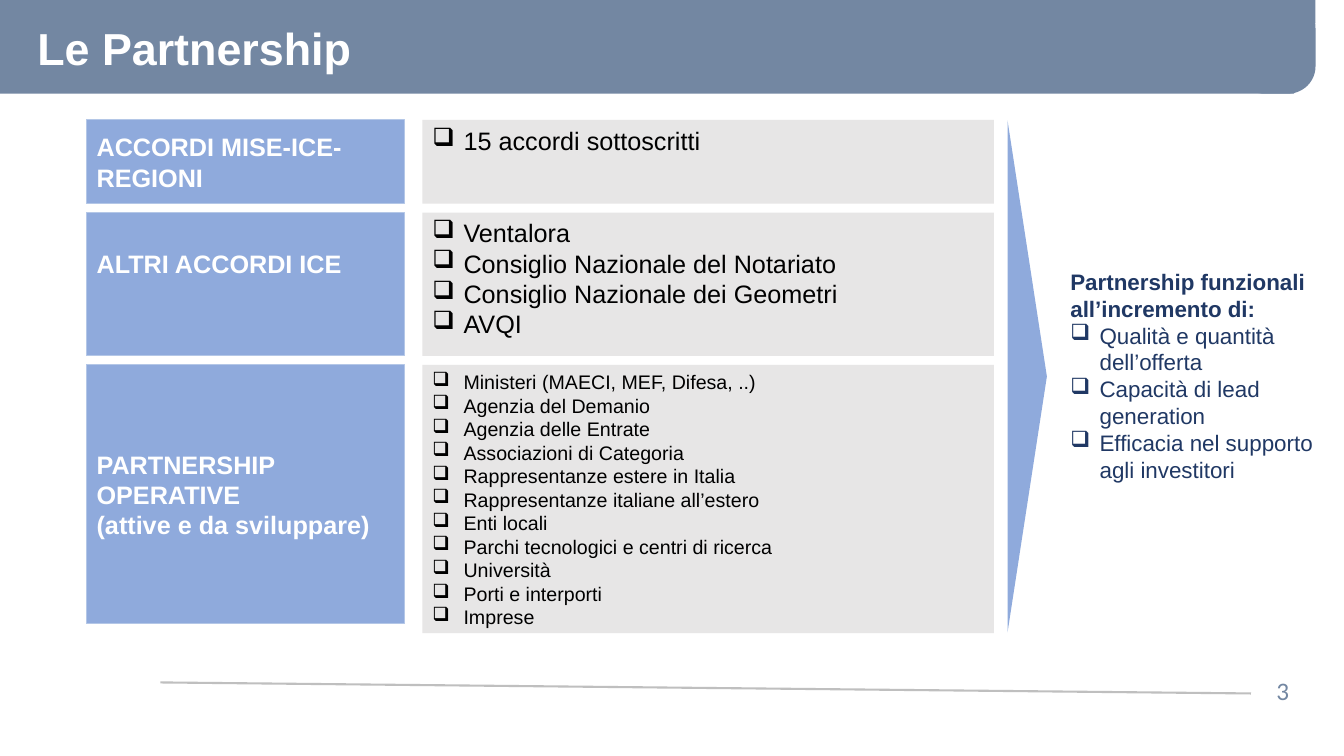
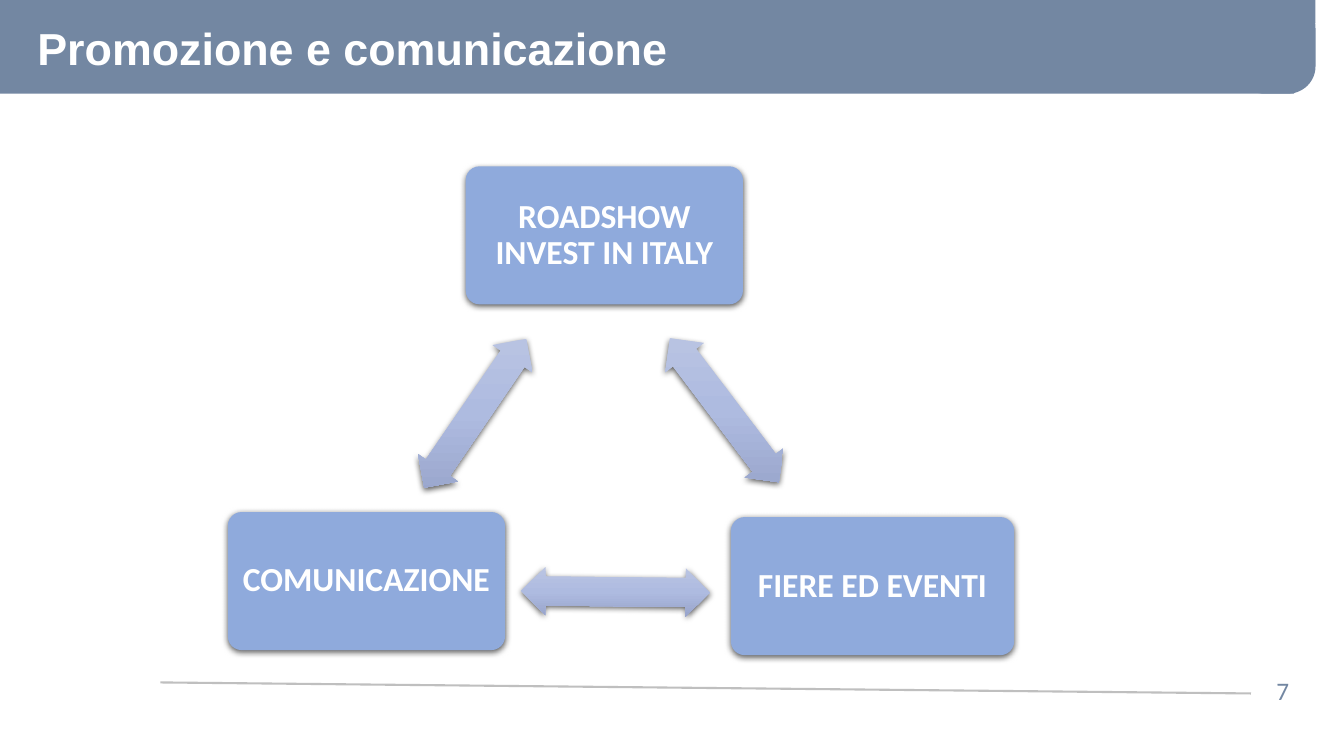
"""Builds two slides on partnerships and promotion under a shared header and footer."""
from dataclasses import dataclass, replace
from typing import NamedTuple, Optional

from lxml import etree
from pptx import Presentation, util as u
from pptx.dml.color import RGBColor
from pptx.enum import shapes, text
from pptx.oxml import ns

WIDTH, HEIGHT = u.Inches(13.33), u.Inches(7.5)
COLOURS = {
    "slate": "7387A2", "rule": "BFBFBF", "blue": "8FAADC", "edge": "B4C7E7",
    "grey": "E7E6E6", "navy": "203864", "white": "FFFFFF", "black": "000000",
}
ARROW_GRADIENT = {0: "BBC5E3", 50: "AEBBE0", 100: "98A4CB"}
KIND = shapes.MSO_SHAPE
ANCHOR, ALIGN = text.MSO_ANCHOR, text.PP_ALIGN


class Box(NamedTuple):
    """A frame in percent of the slide's width and height."""
    x: float
    y: float
    w: float
    h: float

    def emu(self) -> tuple[int, int, int, int]:
        """Return the frame in slide units."""
        return (round(WIDTH * self.x / 100), round(HEIGHT * self.y / 100),
                round(WIDTH * self.w / 100), round(HEIGHT * self.h / 100))


@dataclass(frozen=True)
class Style:
    """The look of a block of text; insets and indent are in inches."""
    size: int
    colour: str
    bold: bool = False
    font: str = "Arial"
    align: ALIGN = ALIGN.LEFT
    anchor: ANCHOR = ANCHOR.TOP
    insets: tuple[float, float, float, float] = (0.1, 0.05, 0.1, 0.05)
    spacing: Optional[float] = None
    indent: float = 0
    plain_lead: bool = False


class Agreement(NamedTuple):
    """A row of the partnership grid."""
    label: str
    label_style: Style
    partners: str
    size: int
    height: float
    overhang: float = 0


class Topic(NamedTuple):
    """A rounded box of the promotion cycle."""
    name: str
    box: Box


class Exchange(NamedTuple):
    """A double arrow of the promotion cycle."""
    box: Box
    angle: float


TITLE = Style(32, "white", True, anchor=ANCHOR.MIDDLE, insets=(0, 0, 0, 0), spacing=0.9)
PAGE_NUMBER = Style(18, "slate", font="Calibri", align=ALIGN.CENTER)
LABEL = Style(18, "white", True, anchor=ANCHOR.MIDDLE)
LOWERED_LABEL = replace(LABEL, anchor=ANCHOR.TOP, insets=(0.1, 0.35, 0.1, 0.05))
PARTNERS = Style(18, "black", indent=0.31)
BENEFITS = Style(16, "navy", indent=0.29, plain_lead=True)
TOPIC = Style(24, "white", True, "Calibri", ALIGN.CENTER, ANCHOR.MIDDLE,
              (0.1, 0.1, 0.1, 0.1), 0.9)

HEADER = (
    (KIND.RECTANGLE, Box(0, 0, 96.3, 12.4), ()),
    (KIND.ROUNDED_RECTANGLE, Box(92.03, 0, 5.85, 12.4), (0.35,)),
    (KIND.RECTANGLE, Box(92.03, 0, 5.85, 3.07), ()),
)
TITLE_BOX = Box(2.78, 2.67, 92.7, 8.13)
FOOTER_RULE = Box(11.93, 90.27, 81.15, 1.46)
NUMBER_BOX = Box(93.08, 88.67, 4.73, 5.33)

LABEL_X, LABEL_W = 6.45, 23.63
PARTNERS_X, PARTNERS_W = 31.43, 42.53
GRID_TOP, ROW_GAP = 15.87, 1.2
POINTER_BOX = Box(57.38, 47.2, 38.1, 5.2)
BENEFITS_BOX = Box(78.9, 34.8, 21.08, 30.13)

AGREEMENTS = (
    Agreement("ACCORDI MISE-ICE-REGIONI", LABEL, "15 accordi sottoscritti", 18, 11.07),
    Agreement("ALTRI ACCORDI ICE", LOWERED_LABEL,
              "Ventalora\nConsiglio Nazionale del Notariato\n"
              "Consiglio Nazionale dei Geometri\nAVQI", 18, 18.93),
    Agreement("PARTNERSHIP OPERATIVE\n(attive e da sviluppare)", LABEL,
              "Ministeri (MAECI, MEF, Difesa, ..)\nAgenzia del Demanio\n"
              "Agenzia delle Entrate\nAssociazioni di Categoria\n"
              "Rappresentanze estere in Italia\nRappresentanze italiane all’estero\n"
              "Enti locali\nParchi tecnologici e centri di ricerca\n"
              "Università\nPorti e interporti\nImprese", 14, 34.27, ROW_GAP),
)
BENEFITS_TEXT = (
    "Partnership funzionali all’incremento di:\nQualità e quantità dell’offerta\n"
    "Capacità di lead generation\nEfficacia nel supporto agli investitori"
)
TOPICS = (
    Topic("ROADSHOW INVEST IN ITALY", Box(34.65, 22, 20.63, 18.27)),
    Topic("FIERE ED EVENTI", Box(54.38, 68.4, 21.08, 18.27)),
    Topic("COMUNICAZIONE", Box(16.95, 67.73, 20.63, 18.27)),
)
EXCHANGES = (
    Exchange(Box(47.18, 51.07, 13.43, 6.4), 52.9),
    Exchange(Box(38.78, 75.07, 14.03, 6.4), 180.6),
    Exchange(Box(28.65, 51.47, 13.43, 6.4), 304.4),
)


def rgb(name: str) -> RGBColor:
    """Look up a named colour."""
    return RGBColor.from_string(COLOURS[name])


def add_child(parent, tag: str, **attributes):
    """Append a drawing element and return it."""
    return etree.SubElement(parent, ns.qn(tag), attributes)


def write(shape, words: str, style: Style) -> None:
    """Fill a shape with text in the given style."""
    frame = shape.text_frame
    frame.text = words
    frame.word_wrap = True
    frame.vertical_anchor = style.anchor
    (frame.margin_left, frame.margin_top,
     frame.margin_right, frame.margin_bottom) = map(u.Inches, style.insets)
    for place, paragraph in enumerate(frame.paragraphs):
        lead = style.plain_lead and place == 0
        paragraph.alignment = style.align
        if style.spacing:
            paragraph.line_spacing = style.spacing
        if style.indent and not lead:
            properties = paragraph._p.get_or_add_pPr()
            reach = u.Inches(style.indent)
            properties.set("marL", str(reach))
            properties.set("indent", str(-reach))
            add_child(properties, "a:buChar", char="❑")
        for run in paragraph.runs:
            run.font.name = style.font
            run.font.size = u.Pt(style.size)
            run.font.bold = style.bold or lead
            run.font.color.rgb = rgb(style.colour)


def add_text(slide, box: Box, words: str, style: Style) -> None:
    """Add a text box."""
    write(slide.shapes.add_textbox(*box.emu()), words, style)


def add_block(slide, kind: KIND, box: Box, fill: str, adjustments: tuple[float, ...] = (),
              edge: Optional[str] = None, angle: float = 0):
    """Add a flat filled shape and return it."""
    block = slide.shapes.add_shape(kind, *box.emu())
    block.shadow.inherit = False
    block.fill.solid()
    block.fill.fore_color.rgb = rgb(fill)
    if edge:
        block.line.color.rgb = rgb(edge)
        block.line.width = u.Pt(0.75)
    else:
        block.line.fill.background()
    for place, value in enumerate(adjustments):
        block.adjustments[place] = value
    block.rotation = angle
    return block


def add_shadow(block) -> None:
    """Give a shape a soft shadow below."""
    effects = block._element.spPr.find(ns.qn("a:effectLst"))
    shadow = add_child(effects, "a:outerShdw", blurRad=str(u.Pt(4.5)), dist=str(u.Pt(1.5)),
                       dir="5400000", algn="ctr", rotWithShape="0")
    shade = add_child(shadow, "a:srgbClr", val=COLOURS["black"])
    add_child(shade, "a:alpha", val="63000")


def shade_downwards(block) -> None:
    """Replace a solid fill by the arrow gradient, upright at any rotation."""
    properties = block._element.spPr
    gradient = etree.Element(ns.qn("a:gradFill"), rotWithShape="0")
    stops = add_child(gradient, "a:gsLst")
    for share, colour in ARROW_GRADIENT.items():
        stop = add_child(stops, "a:gs", pos=str(share * 1000))
        add_child(stop, "a:srgbClr", val=colour)
    add_child(gradient, "a:lin", ang="5400000", scaled="0")
    properties.replace(properties.find(ns.qn("a:solidFill")), gradient)


def add_page(deck, title: str, number: int):
    """Add a slide with the shared header, title and footer."""
    slide = deck.slides.add_slide(deck.slide_layouts[6])
    for kind, box, adjustments in HEADER:
        add_block(slide, kind, box, "slate", adjustments)
    left, top, width, height = FOOTER_RULE.emu()
    rule = slide.shapes.add_connector(shapes.MSO_CONNECTOR.STRAIGHT,
                                      left, top, left + width, top + height)
    rule.line.color.rgb = rgb("rule")
    rule.line.width = u.Pt(1.5)
    add_child(rule._element.spPr, "a:effectLst")
    add_text(slide, NUMBER_BOX, str(number), PAGE_NUMBER)
    add_text(slide, TITLE_BOX, title, TITLE)
    return slide


def add_partnerships(deck) -> None:
    """Build the slide on partnerships."""
    slide = add_page(deck, "Le Partnership", 3)
    top = GRID_TOP
    for row in AGREEMENTS:
        label = add_block(slide, KIND.RECTANGLE, Box(LABEL_X, top, LABEL_W, row.height),
                          "blue", edge="edge")
        write(label, row.label, row.label_style)
        partners = add_block(slide, KIND.RECTANGLE,
                             Box(PARTNERS_X, top, PARTNERS_W, row.height + row.overhang), "grey")
        write(partners, row.partners, replace(PARTNERS, size=row.size))
        top += row.height + ROW_GAP
    add_block(slide, KIND.ISOSCELES_TRIANGLE, POINTER_BOX, "blue", angle=90)
    add_text(slide, BENEFITS_BOX, BENEFITS_TEXT, BENEFITS)


def add_promotion(deck) -> None:
    """Build the slide on promotion."""
    slide = add_page(deck, "Promozione e comunicazione", 7)
    for topic in TOPICS:
        card = add_block(slide, KIND.ROUNDED_RECTANGLE, topic.box, "blue", (0.1,))
        add_shadow(card)
        write(card, topic.name, TOPIC)
    for exchange in EXCHANGES:
        arrow = add_block(slide, KIND.LEFT_RIGHT_ARROW, exchange.box, "blue",
                          (0.6, 0.5), angle=exchange.angle)
        shade_downwards(arrow)
        add_shadow(arrow)


def main() -> None:
    """Build and save the presentation."""
    deck = Presentation()
    deck.slide_width, deck.slide_height = WIDTH, HEIGHT
    add_partnerships(deck)
    add_promotion(deck)
    deck.save("out.pptx")


if __name__ == "__main__":
    main()
